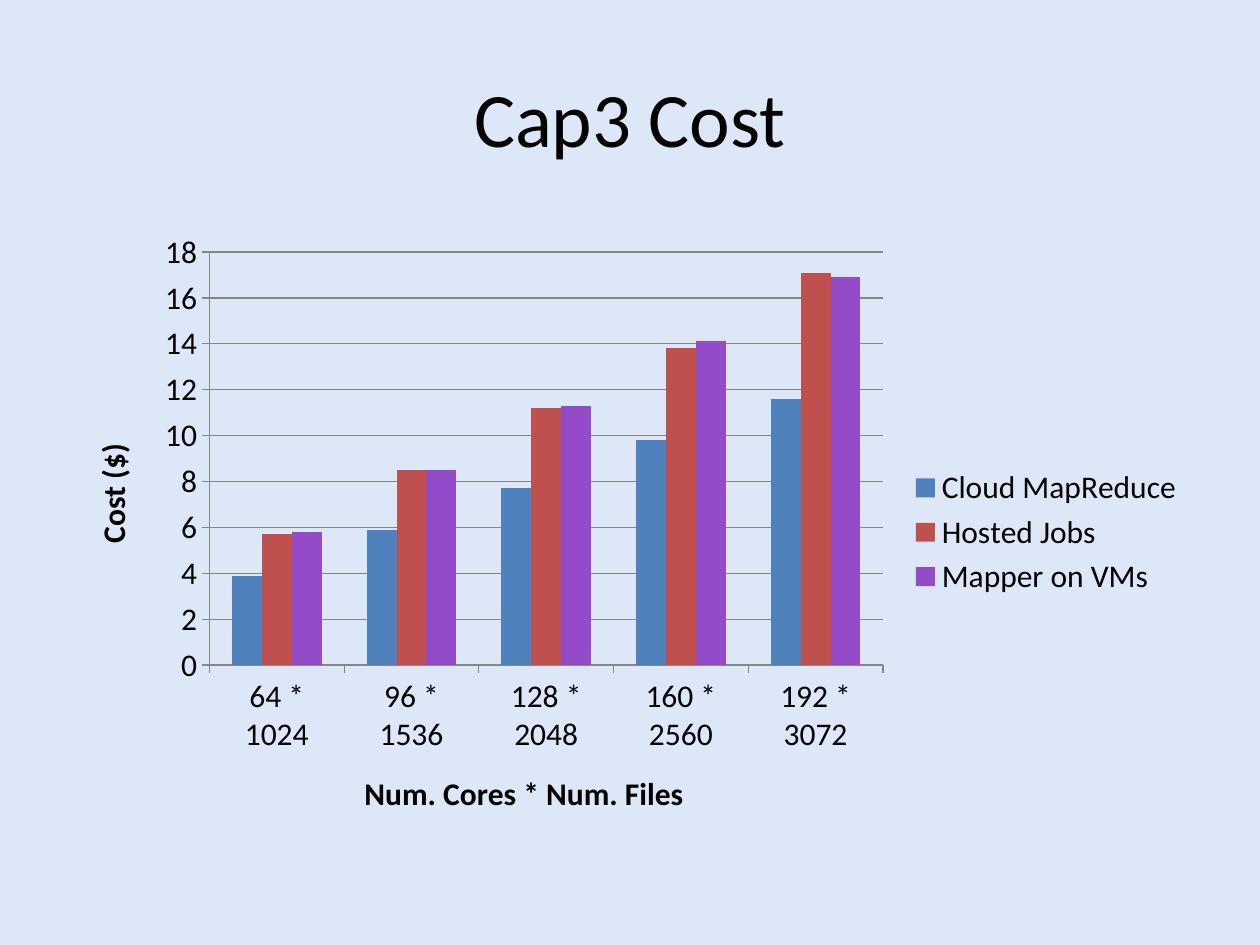
from pptx import Presentation
from pptx import util as u
from pptx.chart import data as cd
from pptx.dml import color as col
from pptx.enum import chart as ch, text

# Content
TITLE = "Cap3 Cost"
CATEGORY_TITLE, VALUE_TITLE = "Num. Cores * Num. Files", "Cost ($)"
RUNS = [(64, 1024), (96, 1536), (128, 2048), (160, 2560), (192, 3072)]
SERIES = [
    ("Cloud MapReduce", "4F81BD", [3.9, 5.9, 7.7, 9.8, 11.6]),
    ("Hosted Jobs", "C0504D", [5.7, 8.5, 11.2, 13.8, 17.1]),
    ("Mapper on VMs", "934BC9", [5.8, 8.5, 11.3, 14.1, 16.9]),
]

THEME = {
    "font": "Calibri", "bg": "DEE7F8", "ink": "000000", "grid": "868686",
    "title": 44, "body": 18,
}

# Places as shares of the slide: left, top, width, height
W, H = u.Inches(10), u.Inches(7.5)
TITLE_BOX = (0.05, 0.04, 0.9, 1 / 6)
CHART_BOX = (0.05, 0.7 / 3, 0.9, 0.66)


def place(box):
    return [int(share * side) for share, side in zip(box, (W, H, W, H))]


def rgb(value):
    return col.RGBColor.from_string(value)


def style(font, size, bold=False):
    font.name, font.size, font.bold = THEME["font"], u.Pt(size), bold
    font.color.rgb = rgb(THEME["ink"])


def add_run(p, words, size, bold=False):
    r = p.add_run()
    r.text = words
    style(r.font, size, bold)


prs = Presentation()
prs.slide_width, prs.slide_height = W, H
s = prs.slides.add_slide(prs.slide_layouts[6])
s.background.fill.solid()
s.background.fill.fore_color.rgb = rgb(THEME["bg"])

# Title
tf = s.shapes.add_textbox(*place(TITLE_BOX)).text_frame
tf.word_wrap = True
tf.vertical_anchor = text.MSO_ANCHOR.MIDDLE
p = tf.paragraphs[0]
p.alignment = text.PP_ALIGN.CENTER
add_run(p, TITLE, THEME["title"])

# Cost chart
data = cd.CategoryChartData(number_format="General")
data.categories = [f"{cores} *\n{files}" for cores, files in RUNS]
for name, _, values in SERIES:
    data.add_series(name, values)
chart = s.shapes.add_chart(
    ch.XL_CHART_TYPE.COLUMN_CLUSTERED, *place(CHART_BOX), data).chart
style(chart.font, THEME["body"])
chart.has_title = False
chart.has_legend = True
chart.legend.position = ch.XL_LEGEND_POSITION.RIGHT
chart.legend.include_in_layout = False

plot = chart.plots[0]
plot.vary_by_categories = False
plot.gap_width, plot.overlap = 150, 0
for series, (_, color, _) in zip(plot.series, SERIES):
    series.format.fill.solid()
    series.format.fill.fore_color.rgb = rgb(color)

# Axes
value_axis = chart.value_axis
value_axis.minimum_scale, value_axis.maximum_scale = 0, 18
value_axis.major_unit = 2
value_axis.has_major_gridlines = True
lines = [value_axis.major_gridlines.format.line]
for axis, words in ((chart.category_axis, CATEGORY_TITLE),
                    (value_axis, VALUE_TITLE)):
    axis.major_tick_mark = ch.XL_TICK_MARK.OUTSIDE
    axis.minor_tick_mark = ch.XL_TICK_MARK.NONE
    p = axis.axis_title.text_frame.paragraphs[0]
    add_run(p, words, THEME["body"], True)
    lines.append(axis.format.line)
for line in lines:
    line.color.rgb = rgb(THEME["grid"])
    line.width = u.Pt(0.75)

prs.save("out.pptx")
